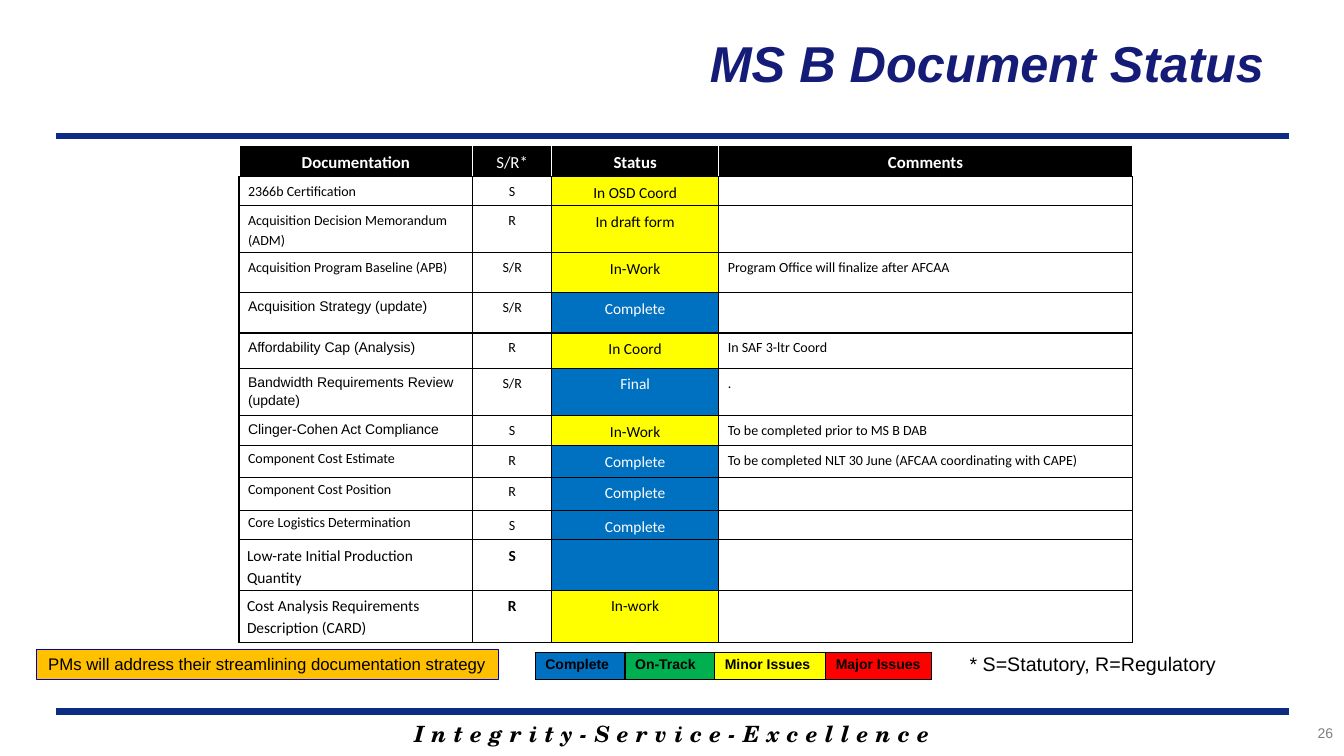
from dataclasses import dataclass

from lxml.etree import SubElement
from pptx import Presentation
from pptx.dml.color import RGBColor
from pptx.enum.shapes import MSO_CONNECTOR, MSO_SHAPE
from pptx.enum.text import MSO_ANCHOR, PP_ALIGN
from pptx.oxml.ns import qn
from pptx.util import Inches, Pt


@dataclass(frozen=True)
class Theme:
    black: str = "000000"
    white: str = "FFFFFF"
    title: str = "151C77"
    rule: str = "0C2D83"
    blue: str = "0070C0"
    green: str = "00B050"
    yellow: str = "FFFF00"
    red: str = "FF0000"
    callout: str = "FFC000"
    callout_line: str = "0000CC"
    page: str = "7F7F7F"
    sans: str = "Arial"
    body: str = "Calibri"
    motto: str = "TeX Gyre Schola"
    title_size: int = 36
    motto_size: int = 16
    note_size: int = 14
    header_size: int = 12
    status_size: int = 11
    small_size: int = 10


THEME = Theme()

COLUMN_WIDTHS = (2.32, 0.78, 1.66, 4.1)
HEADINGS = ("Documentation", "S/R*", "Status", "Comments")

# Row height, document, code, status, status colour, comment
DOCUMENTS = (
    (0.29, "2366b Certification", "S", "In OSD Coord", THEME.yellow, ""),
    (0.46, "Acquisition Decision Memorandum (ADM)", "R", "In draft form", THEME.yellow, ""),
    (0.4, "Acquisition Program Baseline (APB)", "S/R", "In-Work", THEME.yellow,
     "Program Office will finalize after AFCAA"),
    (0.4, "Acquisition Strategy (update)", "S/R", "Complete", THEME.blue, ""),
    (0.35, "Affordability Cap (Analysis)", "R", "In Coord", THEME.yellow, "In SAF 3-ltr Coord"),
    (0.47, "Bandwidth Requirements Review (update)", "S/R", "Final", THEME.blue, "."),
    (0.3, "Clinger-Cohen Act Compliance", "S", "In-Work", THEME.yellow,
     "To be completed prior to MS B DAB"),
    (0.31, "Component Cost Estimate", "R", "Complete", THEME.blue,
     "To be completed NLT 30 June (AFCAA coordinating with CAPE)"),
    (0.33, "Component Cost Position", "R", "Complete", THEME.blue, ""),
    (0.29, "Core Logistics Determination", "S", "Complete", THEME.blue, ""),
    (0.48, "Low-rate Initial Production Quantity", "S", "", THEME.blue, ""),
    (0.52, "Cost Analysis Requirements Description (CARD)", "R", "In-work", THEME.yellow, ""),
)
ARIAL_ROWS = range(4, 8)
SINGLE_SPACED_ROWS = range(8, 11)
LARGE_ROWS = range(11, 13)

LEGEND = (
    ("Complete", THEME.blue, 0.89),
    ("On-Track", THEME.green, 0.89),
    ("Minor Issues", THEME.yellow, 1.1),
    ("Major Issues", THEME.red, 1.05),
)


def rgb(colour):
    return RGBColor.from_string(colour)


def write(frame, text, size, font=THEME.sans, colour=THEME.black,
          bold=False, italic=False, align=PP_ALIGN.LEFT):
    frame.text = text
    paragraph = frame.paragraphs[0]
    paragraph.alignment = align
    for run in paragraph.runs:
        run.font.size = Pt(size)
        run.font.name = font
        run.font.bold = bold
        run.font.italic = italic
        run.font.color.rgb = rgb(colour)
    return paragraph


def add_label(slide, box, text, size, wrap=True, **style):
    frame = slide.shapes.add_textbox(*map(Inches, box)).text_frame
    frame.word_wrap = wrap
    write(frame, text, size, **style)
    return frame


def add_rule(slide, left, top, width):
    rule = slide.shapes.add_connector(
        MSO_CONNECTOR.STRAIGHT, Inches(left), Inches(top), Inches(left + width), Inches(top))
    rule.line.color.rgb = rgb(THEME.rule)
    rule.line.width = Pt(4.5)
    SubElement(rule._element.spPr, qn("a:effectLst"))


def add_grid(slide, box, widths, heights):
    table = slide.shapes.add_table(len(heights), len(widths), *map(Inches, box)).table
    table.first_row = table.horz_banding = False
    for column, width in zip(table.columns, widths):
        column.width = Inches(width)
    for row, height in zip(table.rows, heights):
        row.height = Inches(height)
    return table


def fill_cell(cell, text, size, fill=THEME.white, sides=THEME.black, top=THEME.black,
              margins=(0.09, 0.04), spacing=None, **style):
    cell.margin_left = cell.margin_right = Inches(margins[0])
    cell.margin_top = cell.margin_bottom = Inches(margins[1])
    paragraph = write(cell.text_frame, text, size, **style)
    if spacing:
        paragraph.line_spacing = spacing
    if not text:  # keeps an empty cell from stretching its row
        SubElement(paragraph._p, qn("a:endParaRPr"), sz=str(size * 100))
    properties = cell._tc.get_or_add_tcPr()
    edges = (("a:lnL", sides), ("a:lnR", sides), ("a:lnT", top), ("a:lnB", THEME.black))
    for edge, colour in edges:
        line = SubElement(properties, qn(edge), w=str(Pt(1)))
        SubElement(SubElement(line, qn("a:solidFill")), qn("a:srgbClr"), val=colour)
    cell.fill.solid()
    cell.fill.fore_color.rgb = rgb(fill)


def add_document_table(slide, box):
    heights = [0.3] + [document[0] for document in DOCUMENTS]
    table = add_grid(slide, box, COLUMN_WIDTHS, heights)
    # Header row
    for column, heading in enumerate(HEADINGS):
        fill_cell(table.cell(0, column), heading, THEME.header_size, fill=THEME.black,
                  sides=THEME.white, top=THEME.white, spacing=1.15, font=THEME.body,
                  colour=THEME.white, bold=heading != "S/R*", align=PP_ALIGN.CENTER)
    # One row per document
    for row, (_, name, code, status, fill, comment) in enumerate(DOCUMENTS, 1):
        large = row in LARGE_ROWS
        size = THEME.status_size if large else THEME.small_size
        margins = (0.08 if large else 0.09, 0.04)
        fill_cell(table.cell(row, 0), name, size, margins=margins,
                  spacing=None if row in SINGLE_SPACED_ROWS else 1.15,
                  font=THEME.sans if row in ARIAL_ROWS else THEME.body)
        fill_cell(table.cell(row, 1), code, size, margins=margins, spacing=1.15,
                  font=THEME.body, bold=large, align=PP_ALIGN.CENTER)
        fill_cell(table.cell(row, 2), status, THEME.status_size, fill=fill, margins=margins,
                  spacing=1.15, font=THEME.body, align=PP_ALIGN.CENTER,
                  colour=THEME.white if fill == THEME.blue else THEME.black)
        fill_cell(table.cell(row, 3), comment, THEME.small_size, spacing=1.15, font=THEME.body)


def add_legend(slide, box):
    legend = add_grid(slide, box, [width for _, _, width in LEGEND], [box[3]])
    for column, (status, fill, _) in enumerate(LEGEND):
        fill_cell(legend.cell(0, column), status, THEME.small_size, fill=fill,
                  margins=(0.1, 0.05), bold=True)


def add_callout(slide, box):
    callout = slide.shapes.add_shape(MSO_SHAPE.RECTANGLE, *map(Inches, box))
    callout.shadow.inherit = False
    callout.fill.solid()
    callout.fill.fore_color.rgb = rgb(THEME.callout)
    callout.line.color.rgb = rgb(THEME.callout_line)
    callout.line.width = Pt(0.75)
    callout.text_frame.word_wrap = False
    write(callout.text_frame, "PMs will address their streamlining documentation strategy",
          THEME.header_size, align=PP_ALIGN.CENTER)


def add_heading(slide, box):
    left, top, width, height = box
    title = add_label(slide, box, "MS B Document Status", THEME.title_size, colour=THEME.title,
                      bold=True, italic=True, align=PP_ALIGN.RIGHT)
    title.vertical_anchor = MSO_ANCHOR.MIDDLE
    title.margin_right = Inches(0.24)
    add_rule(slide, 0.56, top + height + 0.11, 12.22)


def add_footer(slide, box):
    left, top, width, height = box
    add_rule(slide, left, top, width)
    motto = add_label(slide, (left + 1.33, top + 0.04, 9.56, height),
                      "I n t e g r i t y - S e r v i c e - E x c e l l e n c e",
                      THEME.motto_size, font=THEME.motto, bold=True, italic=True,
                      align=PP_ALIGN.CENTER)
    # Slight letter spacing widens the motto
    motto.paragraphs[0].runs[0].font._element.set("spc", "30")
    add_label(slide, (left + 11.09, top + 0.08, 1.67, 0.33), "26", THEME.small_size,
              colour=THEME.page, align=PP_ALIGN.RIGHT)


def main():
    presentation = Presentation()
    presentation.slide_width, presentation.slide_height = Inches(13.33), Inches(7.5)
    slide = presentation.slides.add_slide(presentation.slide_layouts[6])
    add_heading(slide, (4.66, -0.01, 8.12, 1.25))
    add_document_table(slide, (2.37, 1.44, 8.86, 4.91))
    add_legend(slide, (5.31, 6.47, 3.93, 0.27))
    add_label(slide, (9.51, 6.42, 2.66, 0.34), "* S=Statutory, R=Regulatory",
              THEME.note_size, wrap=False, align=PP_ALIGN.CENTER)
    add_callout(slide, (0.36, 6.44, 4.58, 0.3))
    add_footer(slide, (0.56, 7.06, 12.22, 0.37))
    presentation.save("out.pptx")


if __name__ == "__main__":
    main()
